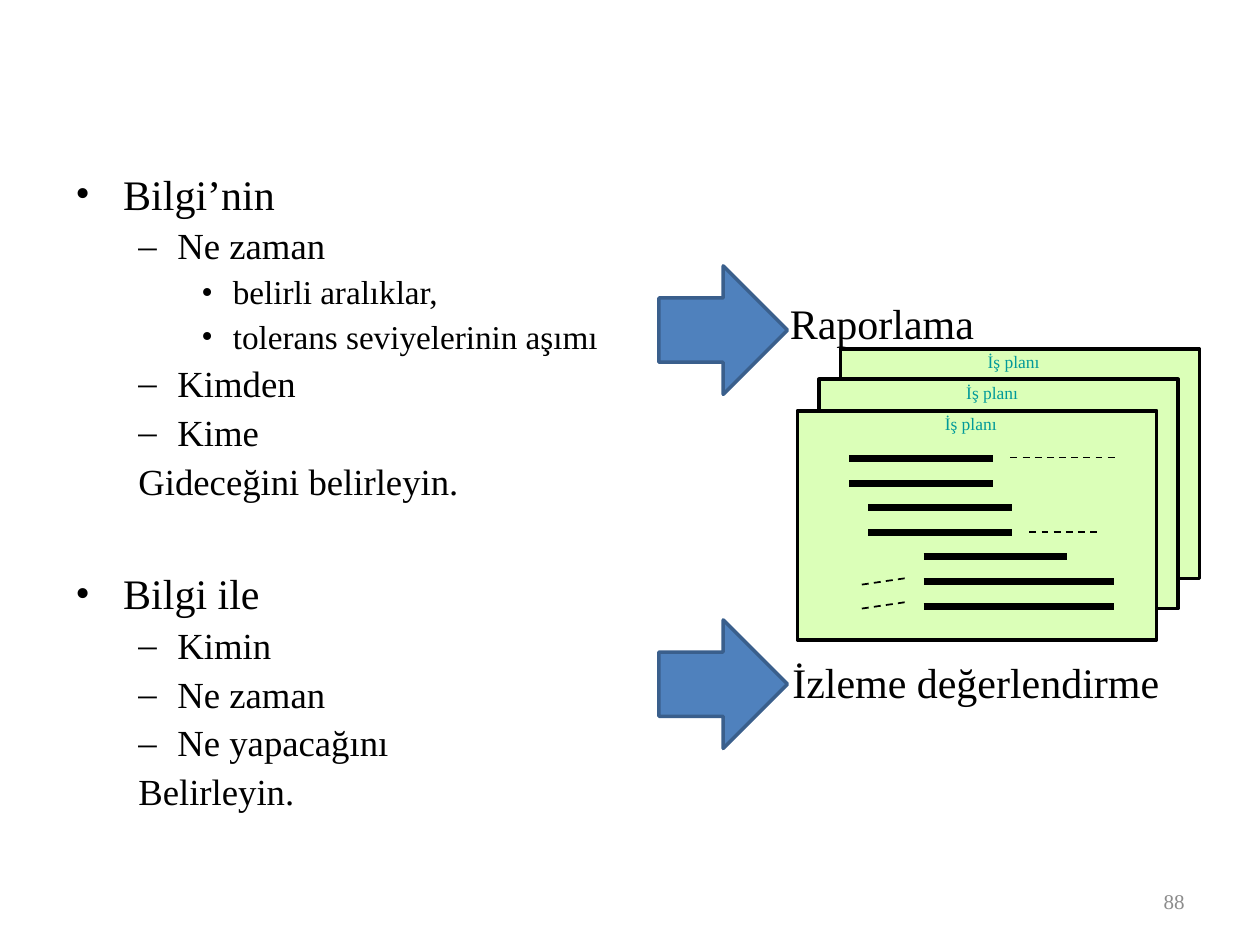
from pptx import Presentation
from pptx.dml.color import RGBColor
from pptx.enum import dml, shapes, text
from pptx.oxml.xmlchemy import OxmlElement
from pptx.util import Inches, Pt

FONT = "Times New Roman"
OUTLINE = [
    (0, "•", "Bilgi’nin"),
    (1, "–", "Ne zaman"),
    (2, "•", "belirli aralıklar,"),
    (2, "•", "tolerans seviyelerinin aşımı"),
    (1, "–", "Kimden"),
    (1, "–", "Kime"),
    (1, None, "Gideceğini belirleyin."),
    (0, "•", "Bilgi ile"),
    (1, "–", "Kimin"),
    (1, "–", "Ne zaman"),
    (1, "–", "Ne yapacağını"),
    (1, None, "Belirleyin."),
]
LEVELS = [(24, 0.38, 0.38), (21, 0.81, 0.31), (19, 1.25, 0.25)]
SECTION_GAP = 40
ARROW_TOPS = [2.11, 4.92]
RESULTS = [("Raporlama", 6.17, 2.31, 2.5), ("İzleme değerlendirme", 6.19, 5.16, 3.73)]
PLAN_LABEL = "İş planı"
PLANS = [(6.67, 2.77), (6.5, 3.01), (6.33, 3.26)]
PLAN_SIZE = (2.85, 1.82)
BARS = [(6.74, 7.88), (6.74, 7.88), (6.89, 8.03), (6.89, 8.03),
        (7.33, 8.47), (7.33, 8.84), (7.33, 8.84)]
BAR_TOP, BAR_STEP = 3.64, 0.195
DASHES = [(8.02, 3.63, 8.88, 3.63), (8.17, 4.22, 8.73, 4.22),
          (6.84, 4.64, 7.18, 4.59), (6.84, 4.83, 7.18, 4.78)]


def color(value):
    return RGBColor.from_string(value)


def add_run(paragraph, words, size, ink="000000"):
    run = paragraph.add_run()
    run.text = words
    run.font.name = FONT
    run.font.size = Pt(size)
    run.font.color.rgb = color(ink)


def add_text_box(parent, left, top, width, height, wrap=True):
    box = parent.add_textbox(*map(Inches, (left, top, width, height)))
    box.text_frame.word_wrap = wrap
    return box.text_frame


def add_box(parent, kind, left, top, width, height, fill, line):
    shape = parent.add_shape(kind, *map(Inches, (left, top, width, height)))
    shape.shadow.inherit = False
    shape.fill.solid()
    shape.fill.fore_color.rgb = color(fill)
    shape.line.color.rgb = color(line)
    shape.line.width = Pt(2)


def add_line(parent, x1, y1, x2, y2, width, dashed=False):
    line = parent.add_connector(shapes.MSO_CONNECTOR.STRAIGHT, *map(Inches, (x1, y1, x2, y2)))
    line.line.color.rgb = color("000000")
    line.line.width = Pt(width)
    if dashed:
        line.line.dash_style = dml.MSO_LINE.DASH
    line._element.spPr.append(OxmlElement("a:effectLst"))


def set_bullet(paragraph, bullet, margin, hanging):
    properties = paragraph._p.get_or_add_pPr()
    properties.set("marL", str(Inches(margin)))
    properties.set("indent", str(-Inches(hanging)))
    mark = OxmlElement("a:buChar" if bullet else "a:buNone")
    if bullet:
        font = OxmlElement("a:buFont")
        font.set("typeface", FONT)
        properties.append(font)
        mark.set("char", bullet)
    properties.append(mark)


def add_outline(parent):
    frame = add_text_box(parent, 0.5, 1.33, 9, 5.4)
    for index, (level, bullet, words) in enumerate(OUTLINE):
        size, margin, hanging = LEVELS[level]
        paragraph = frame.add_paragraph() if index else frame.paragraphs[0]
        paragraph.level = level
        paragraph.line_spacing = 0.9
        paragraph.space_before = Pt(SECTION_GAP if index and level == 0 else size * 0.25)
        set_bullet(paragraph, bullet, margin, hanging)
        add_run(paragraph, words, size)


def add_plans(parent):
    group = parent.add_group_shape().shapes
    for left, top in PLANS:
        add_box(group, shapes.MSO_SHAPE.RECTANGLE, left, top, *PLAN_SIZE, "DBFFB8", "000000")
        frame = add_text_box(group, left + 1.07, top - 0.03, 0.62, 0.27, wrap=False)
        add_run(frame.paragraphs[0], PLAN_LABEL, 10, "009999")
    for row, (start, end) in enumerate(BARS):
        y = BAR_TOP + row * BAR_STEP
        add_line(group, start, y, end, y, 4)
    for dash in DASHES:
        add_line(group, *dash, 1, dashed=True)


def main():
    presentation = Presentation()
    presentation.slide_width = Inches(10)
    presentation.slide_height = Inches(7.5)
    slide = presentation.slides.add_slide(presentation.slide_layouts[6])
    add_outline(slide.shapes)
    for top in ARROW_TOPS:
        add_box(slide.shapes, shapes.MSO_SHAPE.RIGHT_ARROW, 5.23, top, 1.02, 1.02,
                "4F81BD", "3A5F8C")
    for words, left, top, width in RESULTS:
        frame = add_text_box(slide.shapes, left, top, width, 0.51)
        add_run(frame.paragraphs[0], words, 24)
    add_plans(slide.shapes)
    number = add_text_box(slide.shapes, 7.17, 6.95, 2.33, 0.4)
    number.vertical_anchor = text.MSO_ANCHOR.MIDDLE
    number.paragraphs[0].alignment = text.PP_ALIGN.RIGHT
    add_run(number.paragraphs[0], "88", 12, "8C8C8C")
    presentation.save("out.pptx")


if __name__ == "__main__":
    main()
